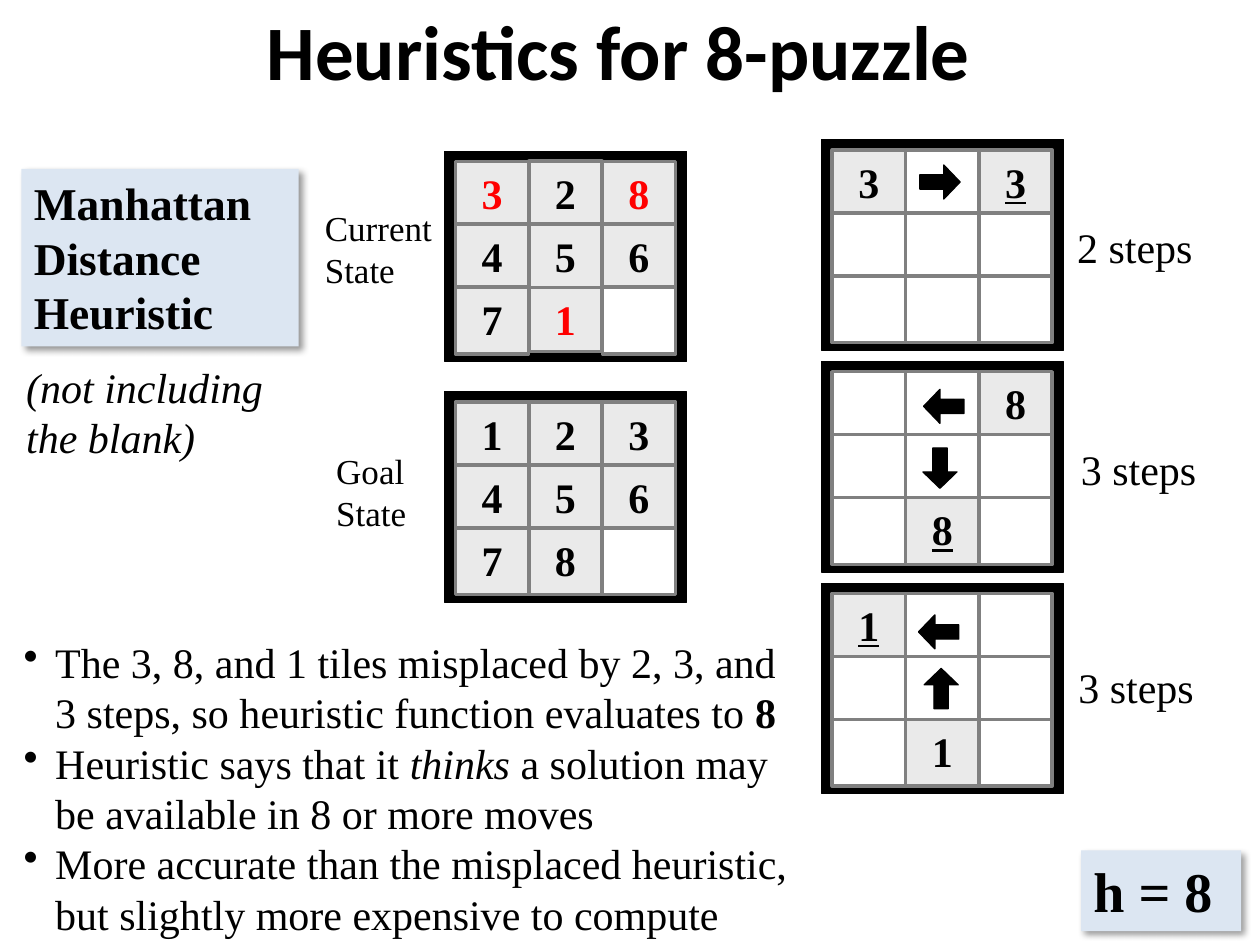
from lxml import etree
from pptx import Presentation
from pptx.dml.color import RGBColor
from pptx.enum.shapes import MSO_SHAPE
from pptx.enum.text import MSO_ANCHOR, PP_ALIGN
from pptx.oxml import parse_xml
from pptx.oxml.ns import qn
from pptx.util import Inches, Pt

RECT, ARROW = MSO_SHAPE.RECTANGLE, MSO_SHAPE.RIGHT_ARROW
CENTER, MIDDLE, TOP = PP_ALIGN.CENTER, MSO_ANCHOR.MIDDLE, MSO_ANCHOR.TOP
SERIF = "Times New Roman"
SHADOW = """<a:effectLst xmlns:a="http://schemas.openxmlformats.org/drawingml/2006/main">
<a:outerShdw blurRad="50800" dist="38100" dir="2700000" algn="tl" rotWithShape="0">
<a:srgbClr val="000000"><a:alpha val="40000"/></a:srgbClr></a:outerShdw></a:effectLst>"""


def paint(shape, fill, line=None, width=0.75):
    shape.shadow.inherit = False
    shape.fill.solid()
    shape.fill.fore_color.rgb = RGBColor.from_string(fill)
    if line:
        shape.line.color.rgb = RGBColor.from_string(line)
        shape.line.width = Pt(width)


def write(shape, lines, size, name=SERIF, color="000000", wrap=True):
    """Fill a shape with paragraphs and return them for further styling."""
    frame = shape.text_frame
    frame.text = "\n".join(lines)
    frame.word_wrap = wrap
    frame.vertical_anchor = TOP
    for para in frame.paragraphs:
        para.font.size = Pt(size)
        para.font.name = name
        para.font.color.rgb = RGBColor.from_string(color)
    return frame.paragraphs


deck = Presentation()
deck.slide_width, deck.slide_height = Inches(10), Inches(7.5)
slide = deck.slides.add_slide(deck.slide_layouts[6])
shapes = slide.shapes

# Title
title = shapes.add_textbox(Inches(0.73), Inches(-0.23), Inches(8.5), Inches(1.25))
para = write(title, ["Heuristics for 8-puzzle "], 44, "Calibri")[0]
para.alignment = CENTER
para.font.bold = True
title.text_frame.vertical_anchor = MIDDLE

# Shaded callouts
callouts = [
    (0.17, 1.34, 2.2, 1.41, ["Manhattan Distance", "Heuristic"], 26, True),
    (8.58, 6.75, 1.27, 0.64, ["h = 8"], 32, False),
]
for x, y, w, h, lines, size, wrap in callouts:
    box = shapes.add_textbox(Inches(x), Inches(y), Inches(w), Inches(h))
    paint(box, "DCE6F2")
    props = box.fill._xPr
    props.remove(props.find(qn("a:effectLst")))
    props.append(parse_xml(SHADOW))
    for para in write(box, lines, size, wrap=wrap):
        para.font.bold = True

# Boards: "!" marks a misplaced tile, "_" its goal place, "." an empty cell
boards = [
    (3.53, 1.2, ["3! 2 8!", "4 5 6", "7 1! ."]),
    (3.53, 3.11, ["1 2 3", "4 5 6", "7 8 ."]),
    (6.52, 1.11, ["3 . 3_", ". . .", ". . ."]),
    (6.52, 2.87, [". . 8", ". . .", ". 8_ ."]),
    (6.52, 4.63, ["1_ . .", ". . .", ". 1 ."]),
]
for x, y, rows in boards:
    board = shapes.add_group_shape().shapes
    frame = board.add_shape(RECT, Inches(x), Inches(y), Inches(1.92), Inches(1.67))
    paint(frame, "000000", "000000")
    for r, row in enumerate(rows):
        for c, mark in enumerate(row.split()):
            wrong = "!" in mark
            tile = board.add_shape(
                RECT, Inches(x + 0.085 + 0.583 * c), Inches(y + 0.08 + 0.5 * r),
                Inches(0.58), Inches(0.51 if wrong else 0.53))
            paint(tile, "FFFFFF" if mark == "." else "EAEAEA", "808080", 2)
            if mark != ".":
                color = "FF0000" if wrong else "000000"
                para = write(tile, [mark[0]], 24, color=color)[0]
                para.alignment = CENTER
                para.font.bold = True
                if "_" in mark:
                    para.font.underline = True

# Moves
moves = [(7.3, 1.31, 0), (7.33, 3.09, 180), (7.3, 3.58, 90),
         (7.29, 4.88, 180), (7.31, 5.33, 270)]
for x, y, turn in moves:
    arrow = shapes.add_shape(ARROW, Inches(x), Inches(y), Inches(0.32), Inches(0.27))
    arrow.adjustments[0], arrow.adjustments[1] = 0.42, 0.48
    arrow.rotation = turn
    paint(arrow, "000000", "000000")

# Labels
labels = [
    (2.48, 1.59, 1.3, 0.77, "Current State", 20, True),
    (2.57, 3.52, 1.16, 0.77, "Goal State", 20, True),
    (8.45, 1.71, 1.13, 0.5, "2 steps", 24, False),
    (8.48, 3.47, 1.13, 0.5, "3 steps", 24, False),
    (8.46, 5.2, 1.13, 0.5, "3 steps", 24, False),
    (0.11, 2.82, 2.34, 0.91, "(not including the blank)", 24, True),
]
for x, y, w, h, text, size, wrap in labels:
    box = shapes.add_textbox(Inches(x), Inches(y), Inches(w), Inches(h))
    para = write(box, [text], size, wrap=wrap)[0]
    para.font.italic = text.startswith("(")

# Bullets: each is plain text, a stressed word and the rest
points = [
    ("The 3, 8, and 1 tiles misplaced by 2, 3, and 3 steps, "
     "so heuristic function evaluates to ", "8", ""),
    ("Heuristic says that it ", "thinks",
     " a solution may be available in 8 or more moves"),
    ("More accurate than the misplaced heuristic, "
     "but slightly more expensive to compute", "", ""),
]
notes = shapes.add_textbox(Inches(0.09), Inches(5), Inches(6.33), Inches(2.52))
paras = write(notes, [start for start, _, _ in points], 24)
for para, (_, stress, rest) in zip(paras, points):
    if stress:
        run = para.add_run()
        run.text = stress
        run.font.bold = stress == "8"
        run.font.italic = stress != "8"
    if rest:
        para.add_run().text = rest
    props = para._p.get_or_add_pPr()
    props.set("marL", str(Inches(0.25)))
    props.set("indent", str(Inches(-0.25)))
    bullet = etree.Element(qn("a:buChar"), char="•")
    props.insert(0, bullet)

deck.save("out.pptx")
